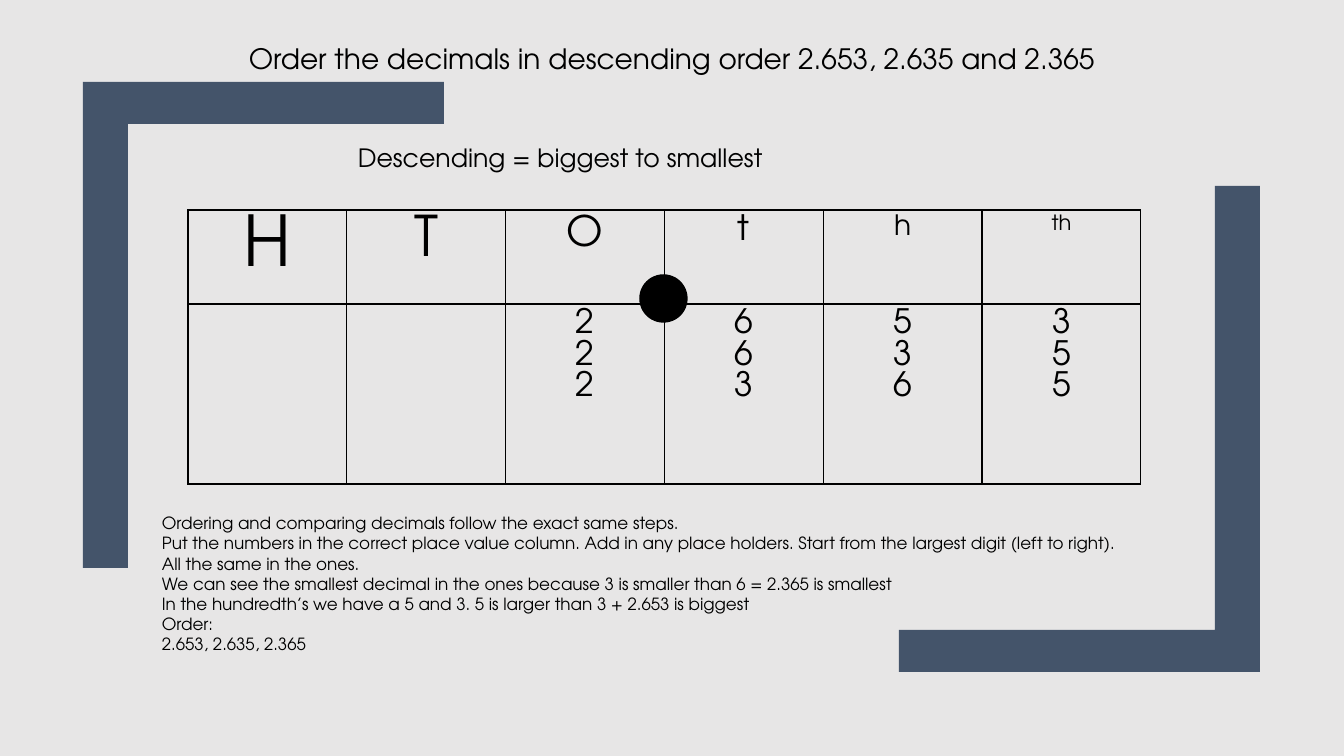
from dataclasses import dataclass

import lxml.etree
import pptx
import pptx.dml.color
import pptx.enum.shapes
import pptx.enum.text
import pptx.oxml.ns
import pptx.util

SCALE = 914400 / 100.8
ALIGN = pptx.enum.text.PP_ALIGN


@dataclass(frozen=True)
class Theme:
    font: str = "TeX Gyre Adventor"
    paper: str = "E7E6E6"
    bracket: str = "44546A"
    ink: str = "000000"
    title: int = 20
    subtitle: int = 18
    digit: int = 24
    body: int = 12
    border: int = 1


THEME = Theme()

PLACE_VALUES = [
    ("H", 50, []),
    ("T", 40, []),
    ("O", 30, ["2", "2", "2"]),
    ("t", 25, ["6", "6", "3"]),
    ("h", 20, ["5", "3", "6"]),
    ("th", 15, ["3", "5", "5"]),
]

STEPS = [
    "Ordering and comparing decimals follow the exact same steps.",
    "Put the numbers in the correct place value column. Add in any place holders. "
    "Start from the largest digit (left to right).",
    "All the same in the ones.",
    "We can see the smallest decimal in the ones because 3 is smaller than 6 = 2.365 is smallest",
    "In the hundredth’s we have a 5 and 3. 5 is larger than 3 + 2.653 is biggest",
    "Order:",
    "2.653, 2.635, 2.365",
]


def px(length):
    return pptx.util.Emu(round(length * SCALE))


def colour(code):
    return pptx.dml.color.RGBColor.from_string(code)


def write(frame, lines, size, align=ALIGN.LEFT):
    frame.word_wrap = True
    for index, line in enumerate(lines):
        para = frame.paragraphs[0] if index == 0 else frame.add_paragraph()
        para.alignment = align
        para.line_spacing = 1.0
        para.space_before = pptx.util.Pt(0)
        span = para.add_run()
        span.text = line
        span.font.name = THEME.font
        span.font.size = pptx.util.Pt(size)
        span.font.color.rgb = colour(THEME.ink)


def add_title(page, box, text):
    title = page.shapes.title
    title.left, title.top, title.width, title.height = map(px, box)
    frame = title.text_frame
    frame.auto_size = pptx.enum.text.MSO_AUTO_SIZE.NONE
    frame.vertical_anchor = pptx.enum.text.MSO_ANCHOR.TOP
    write(frame, [text], THEME.title, align=ALIGN.CENTER)


def add_text(page, box, lines, size):
    write(page.shapes.add_textbox(*map(px, box)).text_frame, lines, size)


def add_bracket(page, box, flipped=False):
    left, top, width, height = box
    bar_width, bar_height = 45, 42
    corners = [(0, 0), (width, 0), (width, bar_height), (bar_width, bar_height),
               (bar_width, height), (0, height)]
    if flipped:
        corners = [(width - x, height - y) for x, y in corners]
    points = [(left + x, top + y) for x, y in corners]
    builder = page.shapes.build_freeform(*points[0], scale=SCALE)
    builder.add_line_segments(points[1:], close=True)
    bracket = builder.convert_to_shape()
    bracket.shadow.inherit = False
    bracket.fill.solid()
    bracket.fill.fore_color.rgb = colour(THEME.bracket)
    bracket.line.fill.background()


def outline_cell(cell):
    properties = cell._tc.get_or_add_tcPr()
    qn = pptx.oxml.ns.qn
    for side in ("a:lnL", "a:lnR", "a:lnT", "a:lnB"):
        line = lxml.etree.SubElement(properties, qn(side), w=str(pptx.util.Pt(THEME.border)))
        fill = lxml.etree.SubElement(line, qn("a:solidFill"))
        lxml.etree.SubElement(fill, qn("a:srgbClr"), val=THEME.ink)
    cell.fill.background()


def add_place_value_chart(page, box, header_height):
    height = box[3]
    table = page.shapes.add_table(2, len(PLACE_VALUES), *map(px, box)).table
    table.first_row = False
    table.horz_banding = False
    table.rows[0].height = px(header_height)
    table.rows[1].height = px(height - header_height)
    for index, (heading, size, digits) in enumerate(PLACE_VALUES):
        table.columns[index].width = px(box[2] / len(PLACE_VALUES))
        for row, (lines, points) in enumerate([([heading], size), (digits, THEME.digit)]):
            cell = table.cell(row, index)
            outline_cell(cell)
            write(cell.text_frame, lines, points, align=ALIGN.CENTER)


def add_decimal_point(page, box):
    dot = page.shapes.add_shape(pptx.enum.shapes.MSO_SHAPE.OVAL, *map(px, box))
    dot.shadow.inherit = False
    dot.fill.solid()
    dot.fill.fore_color.rgb = colour(THEME.ink)
    dot.line.color.rgb = colour(THEME.ink)
    dot.line.width = pptx.util.Pt(THEME.border)


def build_page(deck):
    page = deck.slides.add_slide(deck.slide_layouts.get_by_name("Title Only"))
    page.background.fill.solid()
    page.background.fill.fore_color.rgb = colour(THEME.paper)
    add_bracket(page, (899, 186, 361, 486), flipped=True)
    add_bracket(page, (83, 82, 361, 486))
    add_title(page, (168, 36, 1008, 44),
              "Order the decimals in descending order 2.653, 2.635 and 2.365")
    add_place_value_chart(page, (188, 210, 953, 274), header_height=94)
    add_decimal_point(page, (640, 275, 47, 47))
    add_text(page, (152, 508, 1044, 152), STEPS, THEME.body)
    add_text(page, (348, 137, 793, 40), ["Descending = biggest to smallest"], THEME.subtitle)


def main():
    deck = pptx.Presentation()
    deck.slide_width = px(1344)
    deck.slide_height = px(756)
    build_page(deck)
    deck.save("out.pptx")


if __name__ == "__main__":
    main()
